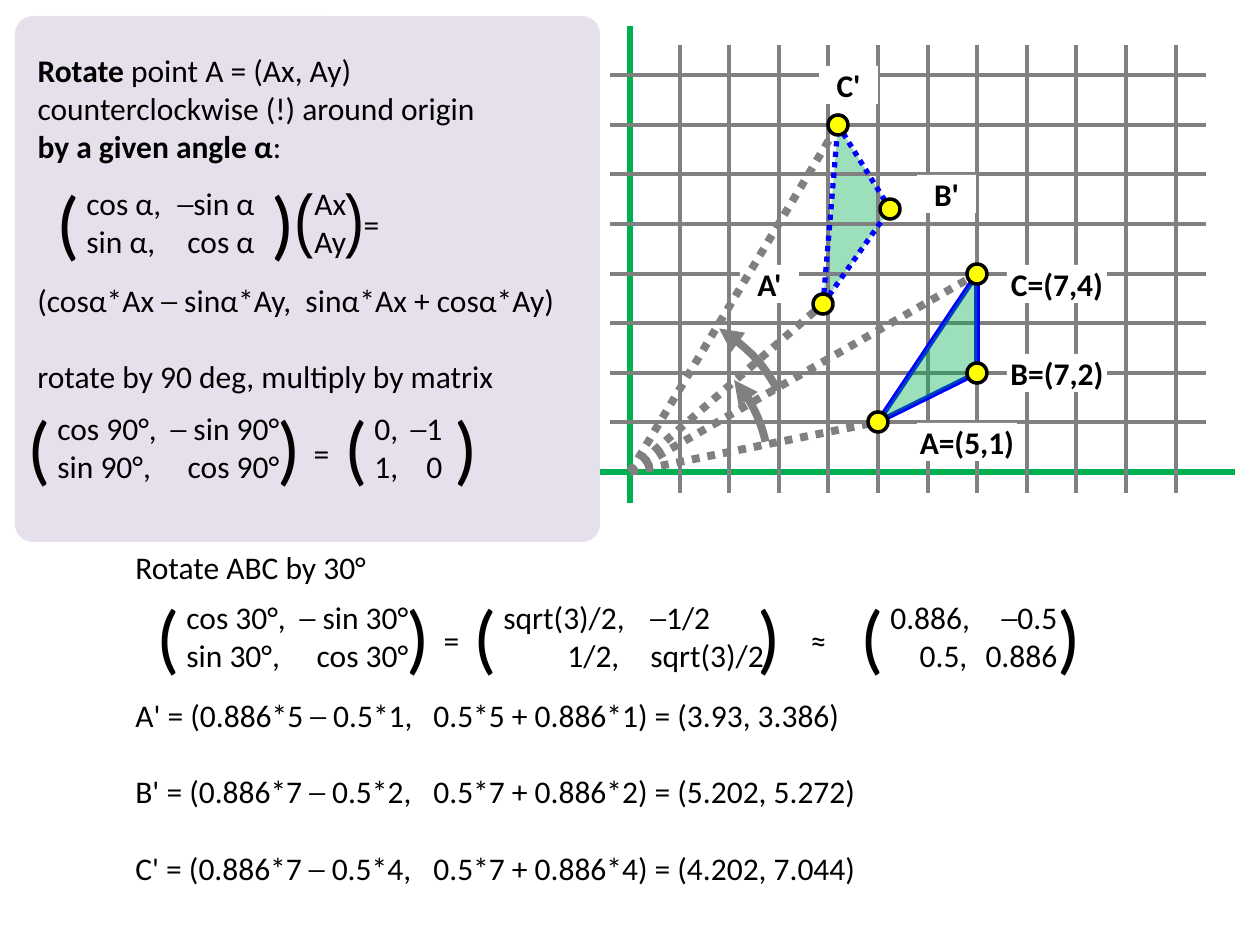
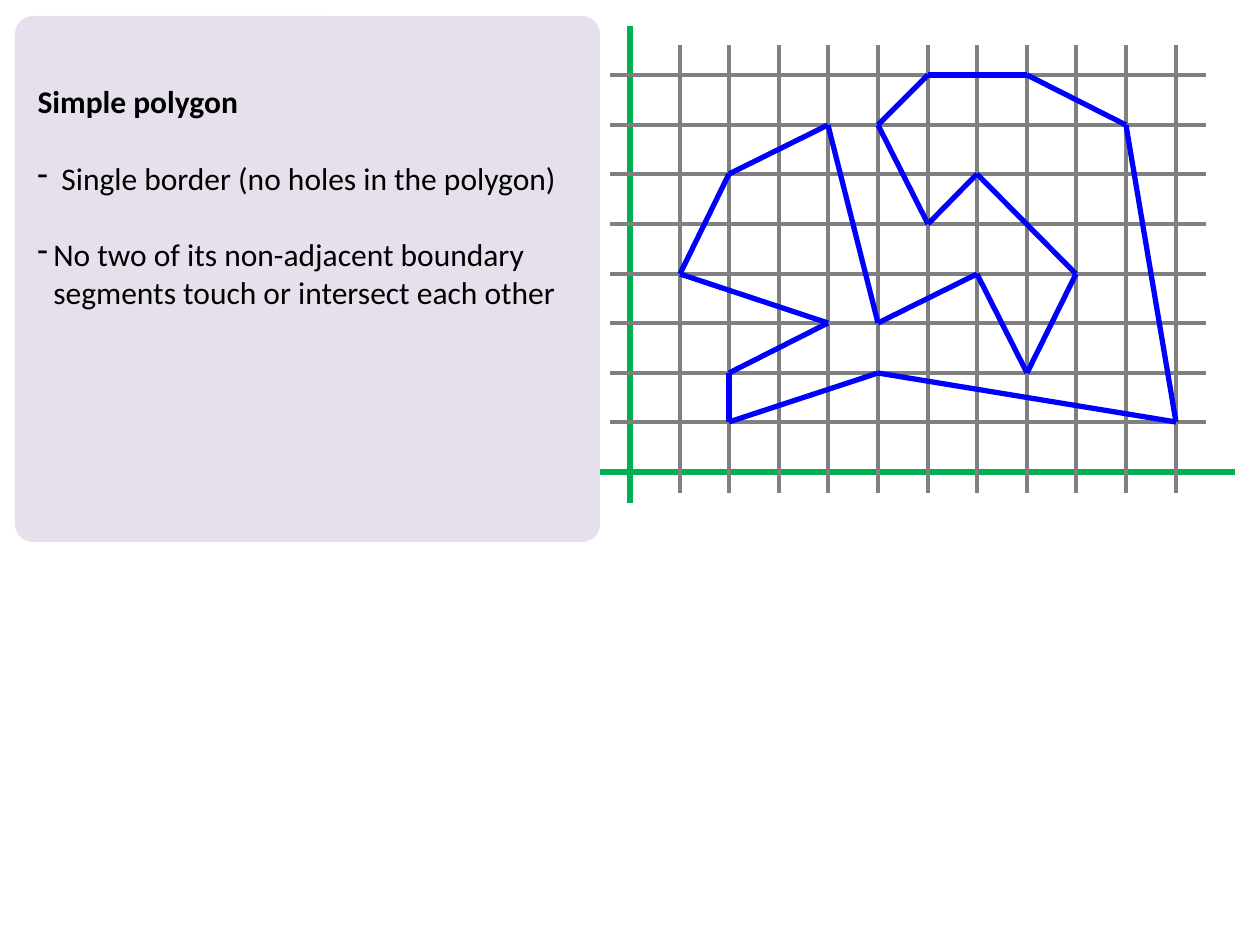
"""Two slides on plane geometry: rotating a triangle, and simple polygons."""
from lxml import etree
from pptx import Presentation
from pptx.dml.color import RGBColor
from pptx.enum.dml import MSO_LINE_DASH_STYLE
from pptx.enum.shapes import MSO_CONNECTOR, MSO_SHAPE
from pptx.enum.text import MSO_ANCHOR, MSO_AUTO_SIZE, PP_ALIGN
from pptx.oxml.ns import qn
from pptx.util import Emu, Pt

DOT_DASH = MSO_LINE_DASH_STYLE.ROUND_DOT
STRAIGHT = MSO_CONNECTOR.STRAIGHT
RECT, ROUND = MSO_SHAPE.RECTANGLE, MSO_SHAPE.ROUNDED_RECTANGLE
OVAL, ARC = MSO_SHAPE.OVAL, MSO_SHAPE.ARC
TOP, MIDDLE = MSO_ANCHOR.TOP, MSO_ANCHOR.MIDDLE
LEFT, CENTER = PP_ALIGN.LEFT, PP_ALIGN.CENTER
NO_FIT = MSO_AUTO_SIZE.NONE

BLACK = RGBColor(0x00, 0x00, 0x00)
WHITE = RGBColor(0xFF, 0xFF, 0xFF)
GRAY = RGBColor(0x80, 0x80, 0x80)
GREEN = RGBColor(0x00, 0xB0, 0x50)
BLUE = RGBColor(0x00, 0x00, 0xFF)
YELLOW = RGBColor(0xFF, 0xFF, 0x00)
LILAC = RGBColor(0xE6, 0xE0, 0xEC)

SCALE = 914400 / 126
WIDTH, HEIGHT = 1260, 945
ORIGIN_X, ORIGIN_Y, STEP = 630, 472, 49.6
COLS, ROWS = 11, 8
BODY, GAP = 18, 22


def px(n):
    return Emu(round(n * SCALE))


def grid(x, y):
    return round(ORIGIN_X + x * STEP), round(ORIGIN_Y - y * STEP)


def edges(points):
    return zip(points, points[1:] + points[:1])


class Board:
    """Holds the shared style and the slide being drawn."""

    def __init__(self, deck):
        self.deck = deck

    def start(self, top, lines):
        self.slide = self.deck.slides.add_slide(self.deck.slide_layouts[5])
        self.shapes = self.slide.shapes
        panel = self.shape(ROUND, 15, 16, 585, 526, LILAC)
        panel.adjustments[0] = 0.034
        self.title(top, lines)

    def font(self, item, size=BODY, bold=False, face="Calibri"):
        font = item.font
        font.name, font.size, font.bold = face, Pt(size), bold
        font.color.rgb = BLACK

    def title(self, top, lines):
        title = self.shapes.title
        self.shapes._spTree.append(title._element)
        title.left, title.top = px(25), px(top)
        title.width, title.height = px(575), px(13 + 38 * len(lines))
        frame = title.text_frame
        frame.auto_size, frame.vertical_anchor = NO_FIT, TOP
        for i, parts in enumerate(lines):
            para = frame.add_paragraph() if i else frame.paragraphs[0]
            para.alignment = LEFT
            for words, bold in parts:
                run = para.add_run()
                run.text = words
                self.font(run, bold=bold)

    def shape(self, kind, x, y, w, h, fill=None, line=None, weight=2):
        shape = self.shapes.add_shape(kind, px(x), px(y), px(w), px(h))
        self.paint(shape, fill, line, weight)
        return shape

    def paint(self, shape, fill, line, weight):
        shape.shadow.inherit = False
        if fill is None:
            shape.fill.background()
        else:
            shape.fill.solid()
            shape.fill.fore_color.rgb = fill
        if line is None:
            shape.line.fill.background()
        else:
            shape.line.color.rgb = line
            shape.line.width = Pt(weight)

    def line(self, a, b, color, weight, dash=None):
        line = self.shapes.add_connector(STRAIGHT, *map(px, a + b))
        line.line.color.rgb = color
        line.line.width = Pt(weight)
        line.line.dash_style = dash
        etree.SubElement(line._element.spPr, qn("a:effectLst"))

    def text(self, x, y, w, h, lines, gap=0, size=BODY, face="Calibri", stops=(), hangs=()):
        frame = self.shapes.add_textbox(px(x), px(y), px(w), px(h)).text_frame
        frame.word_wrap = True
        for i, words in enumerate(lines):
            para = frame.add_paragraph() if i else frame.paragraphs[0]
            para.text = words
            if i and gap:
                para.space_before = Pt(gap)
            props = para._p.get_or_add_pPr()
            if hangs:
                props.set("marL", str(px(hangs[i])))
                props.set("indent", str(-px(hangs[i])))
                etree.SubElement(props, qn("a:buChar"), char="-")
            if stops:
                tabs = etree.SubElement(props, qn("a:tabLst"))
                for place, side in stops:
                    etree.SubElement(tabs, qn("a:tab"), pos=str(px(place)), algn=side)
            self.font(para, size, face=face)

    def label(self, words, x, y, w=59, bold=True, fill=WHITE):
        box = self.shape(RECT, x, y, w, 38, fill)
        frame = box.text_frame
        frame.margin_left = frame.margin_right = 0
        frame.margin_top = frame.margin_bottom = 0
        frame.vertical_anchor = MIDDLE
        para = frame.paragraphs[0]
        para.text, para.alignment = words, CENTER
        self.font(para, bold=bold)

    def sign(self, words, x, y):
        self.label(words, x, y, bold=False, fill=None)

    def matrix(self, x, y, span, rows, stops, inset=30, size=44, face="Calibri"):
        self.text(x, y, span + 60, 106, ["(\t)"], size=size, face=face, stops=[(span, "l")])
        self.text(x + inset, y + 10, span + 40, 89, rows, stops=stops)

    def patch(self, points, fill=None, line=None, dash=None):
        spots = [tuple(map(px, p)) for p in points]
        pen = self.shapes.build_freeform(*spots[0], scale=1.0)
        pen.add_line_segments(spots[1:], close=True)
        shape = pen.convert_to_shape()
        self.paint(shape, fill, line, 3)
        if fill is not None:
            tint = shape._element.spPr.find(".//" + qn("a:srgbClr"))
            etree.SubElement(tint, qn("a:alpha"), val="39000")
        if dash is not None:
            shape.line.dash_style = dash

    def dot(self, point):
        x, y = point
        self.shape(OVAL, x - 10, y - 10, 20, 20, YELLOW, BLACK)

    def arc(self, radius, start, end):
        side = 2 * radius
        arc = self.shape(ARC, ORIGIN_X - radius, ORIGIN_Y - radius, side, side, None, GRAY, 4.5)
        arc.rotation = 270
        arc.adjustments[0], arc.adjustments[1] = start * 0.6, end * 0.6
        etree.SubElement(arc.line._get_or_add_ln(), qn("a:headEnd"), type="triangle")

    def axes(self):
        self.line((600, ORIGIN_Y), (1235, ORIGIN_Y), GREEN, 3)
        self.line((ORIGIN_X, 26), (ORIGIN_X, 503), GREEN, 3)
        for i in range(1, COLS + 1):
            x = grid(i, 0)[0]
            self.line((x, 45), (x, 493), GRAY, 2.25)
        for i in range(1, ROWS + 1):
            y = grid(0, i)[1]
            self.line((610, y), (1206, y), GRAY, 2.25)


def rotate(board):
    board.start(45, [
        [("Rotate ", True), ("point A = (Ax, Ay)", False)],
        [("counterclockwise (!) around origin", False)],
        [("by a given angle α", True), (":", False)]])
    base = [grid(*p) for p in ((5, 1), (7, 2), (7, 4))]
    turned = [grid(*p) for p in ((3.9, 3.39), (5.25, 5.3), (4.2, 7))]
    board.patch(turned, fill=GREEN)
    board.axes()

    board.text(25, 275, 575, 127, [
        "(cosα*Ax ─ sinα*Ay,  sinα*Ax + cosα*Ay)",
        "rotate by 90 deg, multiply by matrix"], GAP)
    board.matrix(44, 168, 215, ["cos α,\t─sin α", "sin α,\tcos α"], [(168, "r")])
    board.matrix(282, 168, 51, ["Ax", "Ay"], [], 20, 40, "Arial Narrow")
    board.sign("=", 342, 205)
    wide = [(222, "r")]
    board.matrix(15, 393, 250, ["cos 90°,\t─ sin 90°", "sin 90°,\tcos 90°"], wide)
    board.sign("=", 292, 434)
    board.matrix(332, 393, 110, ["0,\t─1", "1,\t0"], [(68, "r")])

    board.text(123, 542, 348, 50, ["Rotate ABC by 30°"])
    board.matrix(144, 582, 250, ["cos 30°,\t─ sin 30°", "sin 30°,\tcos 30°"], wide)
    board.sign("=", 422, 621)
    board.matrix(461, 582, 284, ["sqrt(3)/2,\t─1/2", "\t1/2,\tsqrt(3)/2"],
                 [(116, "r"), (147, "l")])
    board.sign("≈", 789, 621)
    board.matrix(848, 582, 197, ["0.886,\t─0.5", "\t0.5,\t0.886"], [(77, "r"), (167, "r")])
    board.text(123, 690, 1081, 204, [
        "A' = (0.886*5 ─ 0.5*1,\t0.5*5 + 0.886*1) = (3.93, 3.386)",
        "B' = (0.886*7 ─ 0.5*2,\t0.5*7 + 0.886*2) = (5.202, 5.272)",
        "C' = (0.886*7 ─ 0.5*4,\t0.5*7 + 0.886*4) = (4.202, 7.044)"],
        GAP, stops=[(298, "l")])

    for words, x, y, w in (
            ("A=(5,1)", 917, 423, 100), ("B=(7,2)", 1007, 354, 100), ("C=(7,4)", 1007, 265, 100),
            ("A'", 740, 265, 59), ("B'", 917, 175, 59), ("C'", 819, 66, 59)):
        board.label(words, x, y, w)
    for a, b in edges(base):
        board.line(a, b, BLUE, 3)
    board.patch(turned, line=BLUE, dash=DOT_DASH)
    board.patch(base, fill=GREEN)
    for i in (0, 2):
        for end in (base[i], turned[i]):
            board.line((ORIGIN_X, ORIGIN_Y), end, GRAY, 4.5, DOT_DASH)
    board.arc(139, 48.57, 77.38)
    board.arc(169, 31.84, 61.05)
    for point in base + turned:
        board.dot(point)


def simple(board):
    board.start(76, [[("Simple polygon", True)]])
    board.axes()
    board.text(25, 153, 595, 166, [
        "Single border (no holes in the polygon)",
        "No two of its non-adjacent boundary\vsegments touch or intersect each other"],
        GAP, hangs=(24, 16))
    corners = [grid(*p) for p in (
        (1, 4), (4, 3), (2, 2), (2, 1), (5, 2), (11, 1), (10, 7), (8, 8), (6, 8),
        (5, 7), (6, 5), (7, 6), (9, 4), (8, 2), (7, 4), (5, 3), (4, 7), (2, 6))]
    for a, b in edges(corners):
        board.line(a, b, BLUE, 3)


def main():
    deck = Presentation()
    deck.slide_width, deck.slide_height = px(WIDTH), px(HEIGHT)
    board = Board(deck)
    rotate(board)
    simple(board)
    deck.save("out.pptx")


if __name__ == "__main__":
    main()
